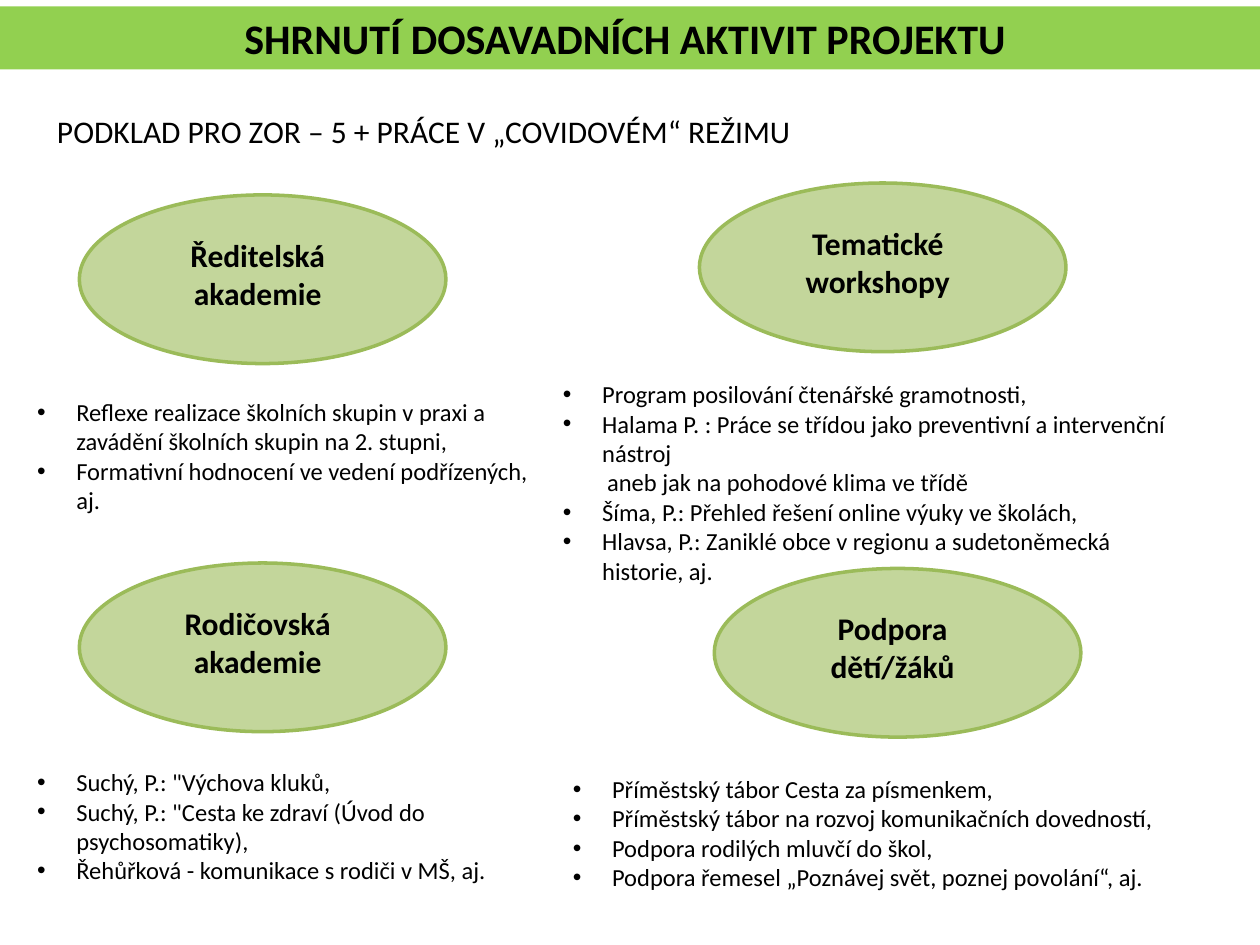
from dataclasses import dataclass

from lxml import etree
from pptx import Presentation
from pptx.dml.color import RGBColor
from pptx.enum import shapes, text
from pptx.oxml import ns
from pptx.util import Cm, Pt


@dataclass(frozen=True)
class Theme:
    font: str = "Calibri"
    ink: RGBColor = RGBColor(0x00, 0x00, 0x00)
    banner: RGBColor = RGBColor(0x92, 0xD0, 0x50)
    oval: RGBColor = RGBColor(0xC3, 0xD6, 0x9B)
    oval_line: RGBColor = RGBColor(0x9B, 0xBB, 0x59)
    title_size: int = 24
    heading_size: int = 18
    list_size: int = 14


@dataclass(frozen=True)
class Box:
    left: float
    top: float
    width: float
    height: float

    def lengths(self) -> tuple:
        return Cm(self.left), Cm(self.top), Cm(self.width), Cm(self.height)


@dataclass(frozen=True)
class Item:
    wording: str
    bullet: bool = True


@dataclass(frozen=True)
class Activity:
    heading: str
    oval_left: float
    oval_top: float
    list_box: Box
    items: tuple[Item, ...]


THEME = Theme()
OVAL_WIDTH, OVAL_HEIGHT = 7.39, 3.4
LABEL_WIDTH, LABEL_HEIGHT = 4.6, 1.8
LABEL_DROP = 0.7
HANGING = 0.79
CONTINUATION = 0.89

ACTIVITIES = (
    Activity("Ředitelská akademie", 1.6, 3.93, Box(0.5, 7.88, 10.8, 4.45), (
        Item("Reflexe realizace školních skupin v praxi a zavádění školních skupin na 2. stupni,"),
        Item("Formativní hodnocení ve vedení podřízených, aj."),
    )),
    Activity("Tematické workshopy", 14.1, 3.69, Box(11.1, 7.52, 12.7, 5.64), (
        Item("Program posilování čtenářské gramotnosti,"),
        Item("Halama P. : Práce se třídou jako preventivní a intervenční nástroj"),
        Item("aneb jak na pohodové klima ve třídě", bullet=False),
        Item("Šíma, P.: Přehled řešení online výuky ve školách,"),
        Item("Hlavsa, P.: Zaniklé obce v regionu a sudetoněmecká historie, aj."),
    )),
    Activity("Rodičovská akademie", 1.6, 11.35, Box(0.5, 15.34, 10.6, 2.64), (
        Item('Suchý, P.: "Výchova kluků,'),
        Item('Suchý, P.: "Cesta ke zdraví (Úvod do psychosomatiky),'),
        Item("Řehůřková - komunikace s rodiči v MŠ, aj."),
    )),
    Activity("Podpora dětí/žáků", 14.4, 11.46, Box(11.3, 15.48, 12.32, 3.25), (
        Item("Příměstský tábor Cesta za písmenkem,"),
        Item("Příměstský tábor na rozvoj komunikačních dovedností,"),
        Item("Podpora rodilých mluvčí do škol,"),
        Item("Podpora řemesel „Poznávej svět, poznej povolání“, aj."),
    )),
)


def write(paragraph, wording: str, size: int, bold: bool = False, align=None) -> None:
    paragraph.text = wording
    paragraph.alignment = align
    for run in paragraph.runs:
        run.font.name = THEME.font
        run.font.size = Pt(size)
        run.font.bold = bold
        run.font.color.rgb = THEME.ink


def add_text_frame(slide, box: Box):
    frame = slide.shapes.add_textbox(*box.lengths()).text_frame
    frame.word_wrap = True
    return frame


def add_filled(slide, kind, box: Box, fill: RGBColor):
    shape = slide.shapes.add_shape(kind, *box.lengths())
    shape.shadow.inherit = False
    shape.fill.solid()
    shape.fill.fore_color.rgb = fill
    return shape


def indent(paragraph, bullet: bool) -> None:
    """Hang the paragraph behind a bullet, or set it in as a continuation."""
    properties = paragraph._p.get_or_add_pPr()
    properties.set("marL", str(Cm(HANGING if bullet else CONTINUATION)))
    if bullet:
        properties.set("indent", str(-Cm(HANGING)))
        etree.SubElement(properties, ns.qn("a:buFont"), typeface="Arial")
        etree.SubElement(properties, ns.qn("a:buChar"), char="•")


def add_oval(slide, activity: Activity) -> None:
    left, top = activity.oval_left, activity.oval_top
    oval = add_filled(slide, shapes.MSO_SHAPE.OVAL,
                      Box(left, top, OVAL_WIDTH, OVAL_HEIGHT), THEME.oval)
    oval.line.color.rgb = THEME.oval_line
    oval.line.width = Pt(2)
    label_left = left + (OVAL_WIDTH - LABEL_WIDTH) / 2 - 0.1
    label = add_text_frame(slide, Box(label_left, top + LABEL_DROP, LABEL_WIDTH, LABEL_HEIGHT))
    write(label.paragraphs[0], activity.heading, THEME.heading_size,
          bold=True, align=text.PP_ALIGN.CENTER)


def add_list(slide, activity: Activity) -> None:
    frame = add_text_frame(slide, activity.list_box)
    for index, item in enumerate(activity.items):
        paragraph = frame.add_paragraph() if index else frame.paragraphs[0]
        indent(paragraph, item.bullet)
        write(paragraph, item.wording, THEME.list_size)


def main() -> None:
    deck = Presentation()
    deck.slide_width, deck.slide_height = Cm(25.4), Cm(19.05)
    slide = deck.slides.add_slide(deck.slide_layouts[6])

    banner = add_filled(slide, shapes.MSO_SHAPE.RECTANGLE,
                        Box(0, 0.13, 25.4, 1.27), THEME.banner)
    banner.line.fill.background()
    write(banner.text_frame.paragraphs[0], "SHRNUTÍ DOSAVADNÍCH AKTIVIT PROJEKTU ",
          THEME.title_size, bold=True, align=text.PP_ALIGN.CENTER)

    subtitle = add_text_frame(slide, Box(0.9, 2.13, 23.6, 1.02))
    write(subtitle.paragraphs[0], "PODKLAD PRO ZOR – 5 + PRÁCE V „COVIDOVÉM“ REŽIMU",
          THEME.heading_size, align=text.PP_ALIGN.JUSTIFY)

    for activity in ACTIVITIES:
        add_oval(slide, activity)
    for activity in ACTIVITIES:
        add_list(slide, activity)

    deck.save("out.pptx")


if __name__ == "__main__":
    main()
